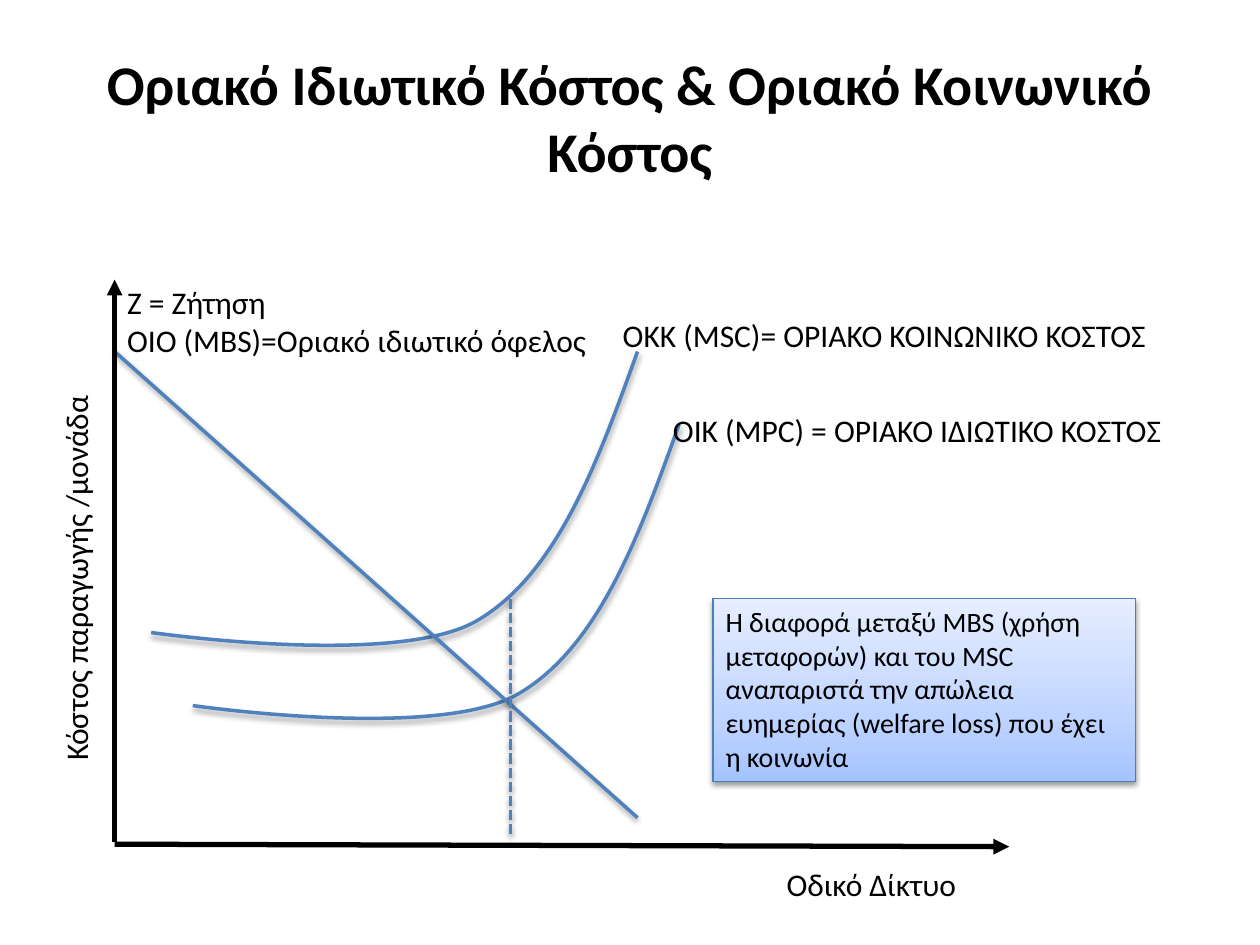
import copy
from lxml import etree
from pptx import Presentation
from pptx import util as u
from pptx.dml.color import RGBColor
from pptx.enum import dml, shapes, text
from pptx.oxml.ns import qn

rgb = RGBColor.from_string
BLACK, BLUE = "000000", "4F81BD"

prs = Presentation()
prs.slide_width, prs.slide_height = u.Inches(10), u.Inches(7.5)
COL, ROW = prs.slide_width / 100, prs.slide_height / 75  # grid of 100 x 75
s = prs.slides.add_slide(prs.slide_layouts[6])


def outline(sp, color, width, shadow):
    """Set the line, with either a soft shadow below or none."""
    sp.line.color.rgb = rgb(color)
    sp.line.width = u.Pt(width)
    effects = etree.SubElement(sp._element.spPr, qn("a:effectLst"))
    if shadow:
        outer = etree.SubElement(effects, qn("a:outerShdw"), blurRad="40000",
                                 dist="20000", dir="5400000", rotWithShape="0")
        clr = etree.SubElement(outer, qn("a:srgbClr"), val=BLACK)
        etree.SubElement(clr, qn("a:alpha"), val="38000")


def write(sp, lines, size, align, bold=False, anchor=text.MSO_ANCHOR.TOP):
    tf = sp.text_frame
    tf.word_wrap = True
    tf.vertical_anchor = anchor
    for i, line in enumerate(lines):
        p = tf.paragraphs[0] if i == 0 else tf.add_paragraph()
        p.alignment = align
        r = p.add_run()
        r.text = line
        r.font.name, r.font.size, r.font.bold = "Calibri", u.Pt(size), bold
        r.font.color.rgb = rgb(BLACK)


# Cost curves: one shape, the social cost shifted up and to the left
curve = [(53.9, 33.7), (50.7, 42.6), (47.5, 51.4), (41.1, 55.1),
         (34.6, 58.8), (15.3, 56), (15.3, 56)]
for dx, dy in [(0, 0), (-3.3, -5.8)]:
    pts = [((x + dx) * COL, (y + dy) * ROW) for x, y in curve]
    fb = s.shapes.build_freeform(*pts[0])
    fb.add_line_segments(pts[1:], close=False)
    sp = fb.convert_to_shape()
    sp.fill.background()
    outline(sp, BLUE, 2, True)
    # Every three points become the controls and end of one Bezier segment
    path_el = sp._element.spPr.find(".//" + qn("a:path"))
    segments = path_el.findall(qn("a:lnTo"))
    for i in range(0, len(segments), 3):
        bezier = etree.SubElement(path_el, qn("a:cubicBezTo"))
        for seg in segments[i:i + 3]:
            bezier.append(seg[0])
            path_el.remove(seg)

# Demand line, axes and the dashed drop line
for x1, y1, x2, y2, color, width, kind in [
    (9.1, 27.9, 50.6, 64.9, BLUE, 2, "plain"),
    (9.1, 66.8, 9.1, 22.2, BLACK, 3, "axis"),
    (9.1, 67, 80.1, 67.2, BLACK, 3, "axis"),
    (40.5, 47.5, 40.5, 66.4, BLUE, 2, "dash"),
]:
    ln = s.shapes.add_connector(shapes.MSO_CONNECTOR.STRAIGHT, round(x1 * COL),
                                round(y1 * ROW), round(x2 * COL), round(y2 * ROW))
    outline(ln, color, width, kind != "axis")
    if kind == "dash":
        ln.line.dash_style = dml.MSO_LINE.SQUARE_DOT
        ln.line._ln.find(qn("a:prstDash")).set("val", "sysDash")
    if kind == "axis":
        etree.SubElement(ln.line._ln, qn("a:tailEnd"), type="triangle")

# Title and labels
LEFT, CENTER = text.PP_ALIGN.LEFT, text.PP_ALIGN.CENTER
for x, y, w, h, lines, align, turn in [
    (-15.3, 43.9, 42.6, 4, ["Κόστος παραγωγής /μονάδα"], CENTER, 270),
    (59.9, 68.2, 18.5, 4, ["Οδικό Δίκτυο"], CENTER, 0),
    (47.7, 24.6, 45, 4, ["ΟΚΚ (ΜSC)= ΟΡΙΑΚΟ ΚΟΙΝΩΝΙΚΟ ΚΟΣΤΟΣ"], CENTER, 0),
    (50.6, 32.1, 44.4, 4, ["ΟΙΚ (MPC) = ΟΡΙΑΚΟ ΙΔΙΩΤΙΚΟ ΚΟΣΤΟΣ"], CENTER, 0),
    (9.1, 22, 42.9, 10.1, ["Ζ = Ζήτηση", "OIO (MBS)=Oριακό ιδιωτικό όφελος"], LEFT, 0),
]:
    label = s.shapes.add_textbox(round(x * COL), round(y * ROW), round(w * COL), round(h * ROW))
    label.rotation = turn
    write(label, lines, 18, align)

title = s.shapes.add_textbox(round(5 * COL), round(3 * ROW), round(90 * COL), round(12.5 * ROW))
write(title, ["Οριακό Ιδιωτικό Κόστος & Οριακό Κοινωνικό Κόστος"], 32, CENTER,
      bold=True, anchor=text.MSO_ANCHOR.MIDDLE)

# Note on the welfare loss
note = s.shapes.add_shape(shapes.MSO_SHAPE.RECTANGLE, round(56.6 * COL), round(47.5 * ROW),
                          round(33.5 * COL), round(14.5 * ROW))
note.fill.gradient()
note.fill.gradient_angle = 90
stops = note._element.spPr.find(".//" + qn("a:gsLst"))
stops.append(copy.deepcopy(stops[0]))
for stop, (pos, color) in zip(note.fill.gradient_stops,
                              [(0, "A4C4FF"), (0.35, "BFD4FF"), (1, "E6EEFF")]):
    stop.position = pos
    stop.color.rgb = rgb(color)
outline(note, "4B7EBC", 0.75, True)
write(note, ["Η διαφορά μεταξύ ΜBS (χρήση μεταφορών) και του MSC αναπαριστά την "
             "απώλεια ευημερίας (welfare loss) που έχει η κοινωνία"], 16, LEFT)

prs.save("out.pptx")
